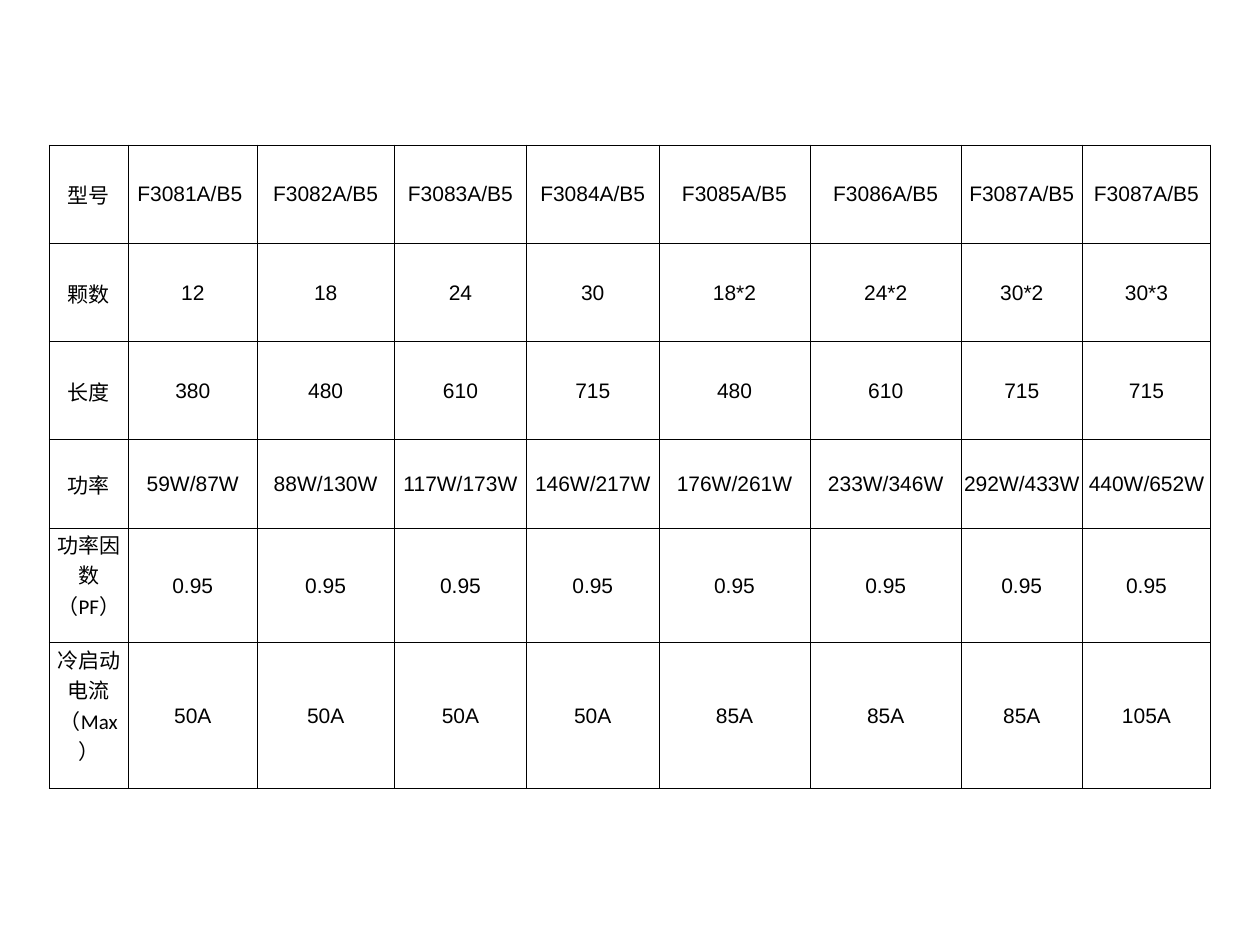
from lxml.etree import SubElement
from pptx import Presentation
from pptx.dml.color import RGBColor
from pptx.enum.text import MSO_ANCHOR, PP_ALIGN
from pptx.oxml.ns import qn
from pptx.util import Inches, Pt

COLORS = {"ink": "000000"}
WIDTHS = [0.63, 1.02, 1.09, 1.05, 1.05, 1.2, 1.2, 0.96, 1.02]
HEIGHTS = [0.78, 0.78, 0.78, 0.7, 0.91, 1.16]
ROWS = [
    ["型号", "F3081A/B5 ", "F3082A/B5", "F3083A/B5", "F3084A/B5",
     "F3085A/B5", "F3086A/B5", "F3087A/B5", "F3087A/B5"],
    ["颗数", "12", "18", "24", "30", "18*2", "24*2", "30*2", "30*3"],
    ["长度", "380", "480", "610", "715", "480", "610", "715", "715"],
    ["功率", "59W/87W", "88W/130W", "117W/173W", "146W/217W",
     "176W/261W", "233W/346W", "292W/433W", "440W/652W"],
    ["功率因数（PF）"] + ["0.95"] * 8,
    ["冷启动电流（Max）"] + ["50A"] * 4 + ["85A"] * 3 + ["105A"],
]


def add_edges(cell):
    """Draw a thin line on all four sides of a cell."""
    props = cell._tc.get_or_add_tcPr()
    for index, side in enumerate(("lnL", "lnR", "lnT", "lnB")):
        line = props.makeelement(qn(f"a:{side}"), {"w": str(Pt(0.5))})
        fill = SubElement(line, qn("a:solidFill"))
        SubElement(fill, qn("a:srgbClr"), val=COLORS["ink"])
        props.insert(index, line)


def fill_cell(cell, text):
    """Write and format one cell; long labels start at the top."""
    label = "（" in text
    cell.text = text
    cell.fill.background()
    cell.margin_left = cell.margin_right = cell.margin_top = Inches(0.01)
    cell.margin_bottom = 0
    cell.vertical_anchor = MSO_ANCHOR.TOP if label else MSO_ANCHOR.MIDDLE
    para = cell.text_frame.paragraphs[0]
    para.alignment = PP_ALIGN.CENTER
    para.font.size = Pt(12)
    para.font.name = "Calibri" if label else "Arial"
    para.font.color.rgb = RGBColor.from_string(COLORS["ink"])
    add_edges(cell)


def add_specs(slide, left, top):
    """Place the table of model data with its corner at left, top."""
    frame = slide.shapes.add_table(
        len(ROWS), len(WIDTHS), Inches(left), Inches(top),
        Inches(sum(WIDTHS)), Inches(sum(HEIGHTS)))
    table = frame.table
    table.first_row = table.horz_banding = False
    for column, width in zip(table.columns, WIDTHS):
        column.width = Inches(width)
    for row, height, texts in zip(table.rows, HEIGHTS, ROWS):
        row.height = Inches(height)
        for cell, text in zip(row.cells, texts):
            fill_cell(cell, text)


def main():
    """Build the slide and save it."""
    deck = Presentation()
    deck.slide_width, deck.slide_height = Inches(10), Inches(7.5)
    slide = deck.slides.add_slide(deck.slide_layouts[6])
    add_specs(slide, 0.39, 1.15)
    deck.save("out.pptx")


if __name__ == "__main__":
    main()
